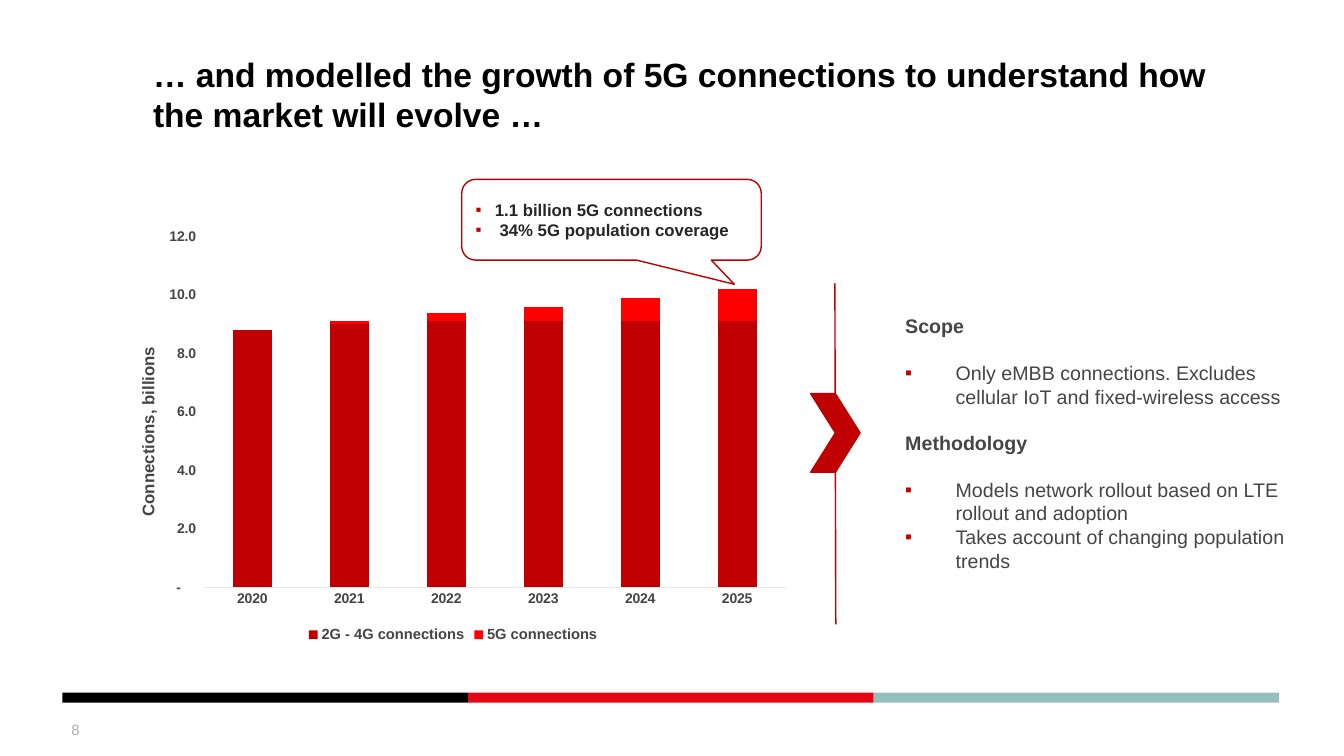
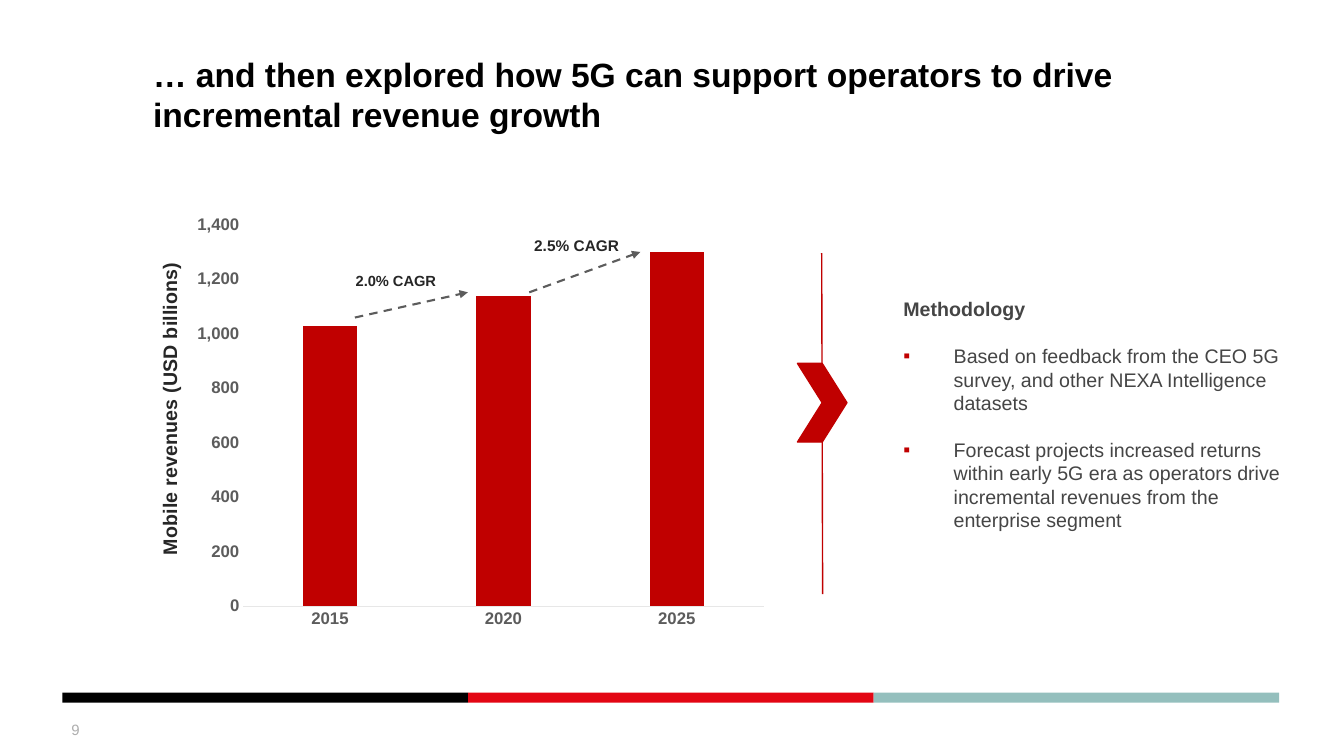
import dataclasses

import lxml.etree
import pptx
import pptx.chart.data
import pptx.dml.color
import pptx.enum.chart
import pptx.enum.dml
import pptx.enum.shapes
import pptx.enum.text
import pptx.oxml.ns
import pptx.util


@dataclasses.dataclass(frozen=True)
class Theme:
    font: str = "Arial"
    black: str = "000000"
    red: str = "C00000"
    bright_red: str = "FF0000"
    dark: str = "262626"
    body: str = "454545"
    gray: str = "5C5C5C"
    pale: str = "AEAEAE"
    axis_line: str = "E7E7E7"
    bands: tuple = ("000000", "E30613", "94BFBD")
    title_size: float = 24
    body_size: float = 14
    callout_size: float = 12
    number_size: float = 10.7
    paragraph_gap: float = 16.5


THEME = Theme()
WIDTH = pptx.util.Inches(13.33)
HEIGHT = pptx.util.Inches(7.5)
SHAPES = pptx.enum.shapes.MSO_SHAPE
MIDDLE = pptx.enum.text.MSO_ANCHOR.MIDDLE

# All positions are percentages of the slide's width and height.
TITLE_BOX = (10.65, 7.07, 80.57, 10.67)
NUMBER_BOX = (4.58, 93.87, 23.33, 5.33)
BAND_BOX = (4.65, 91.6, 90.53, 1.33)

# Notes are (text, style, gap before); layouts within charts are shares of the chart.
SLIDES = [
    {
        "number": "8",
        "title": "… and modelled the growth of 5G connections to understand how the market will evolve …",
        "chart": {
            "box": (7.95, 29.07, 51.54, 56.53),
            "type": pptx.enum.chart.XL_CHART_TYPE.COLUMN_STACKED,
            "categories": ["2020", "2021", "2022", "2023", "2024", "2025"],
            "series": [
                ("2G - 4G connections", [8.8, 9, 9.1, 9.1, 9.1, 9.1], THEME.red),
                ("5G connections", [0, 0.1, 0.3, 0.5, 0.8, 1.1], THEME.bright_red),
            ],
            "gap": 150, "overlap": 100, "maximum": 12, "step": 2,
            "format": '_-* #,##0.0_-;\\-* #,##0.0_-;_-* "-"??_-;',
            "axis_title": ("Connections, billions", 12, THEME.body),
            "labels": (10, THEME.body),
            "legend_size": 10.5,
            "plot": {"x": 0.14, "y": 0.04, "w": 0.84, "h": 0.82},
            "title_place": {"x": 0.04, "y": 0.29},
        },
        "divider": (62.12, 37.47),
        "notes_box": (66.62, 40.93, 31.06, 38.4),
        "notes": [
            ("Scope", "heading", False),
            ("Only eMBB connections. Excludes cellular IoT and fixed-wireless access", "bullet", True),
            ("Methodology", "heading", True),
            ("Models network rollout based on LTE rollout and adoption", "bullet", True),
            ("Takes account of changing population trends", "bullet", False),
        ],
        "callout": {
            "box": (34.36, 23.73, 22.28, 10.67),
            "lines": ["1.1 billion 5G connections", " 34% 5G population coverage"],
        },
    },
    {
        "number": "9",
        "title": "… and then explored how 5G can support operators to drive incremental revenue growth",
        "chart": {
            "box": (9.98, 27.47, 47.79, 56.67),
            "type": pptx.enum.chart.XL_CHART_TYPE.COLUMN_CLUSTERED,
            "categories": ["2015", "2020", "2025"],
            "series": [("Series 1", [1030, 1140, 1300], THEME.red)],
            "gap": 219, "overlap": -27, "maximum": 1400, "step": 200,
            "format": "#,##0",
            "axis_title": ("Mobile revenues (USD billions)", 14, THEME.dark),
            "labels": (12, THEME.gray),
            "plot": {"x": 0.17, "y": 0.04, "w": 0.81, "h": 0.89},
            "title_place": {"x": 0.03, "y": 0.12},
        },
        "divider": (61.14, 33.47),
        "notes_box": (66.47, 38.67, 31.06, 34.27),
        "notes": [
            ("Methodology", "heading", False),
            ("Based on feedback from the CEO 5G survey, and other NEXA Intelligence datasets", "bullet", True),
            ("Forecast projects increased returns within early 5G era as operators drive "
             "incremental revenues from the enterprise segment", "bullet", True),
        ],
        "growth": [
            {"text": "2.0% CAGR", "size": 10.5, "box": (25.73, 35.33, 9.08, 3.87),
             "arrow": (26.41, 42, 34.81, 38.67)},
            {"text": "2.5% CAGR", "size": 11, "box": (39.01, 30.53, 8.18, 3.87),
             "arrow": (39.38, 38.67, 47.64, 33.33)},
        ],
    },
]


def place(*percentages):
    """Turn alternating horizontal and vertical percentages into lengths."""
    return [round((HEIGHT if index % 2 else WIDTH) * share / 100)
            for index, share in enumerate(percentages)]


def color(value):
    return pptx.dml.color.RGBColor.from_string(value)


def add_element(parent, tag, **attributes):
    element = lxml.etree.SubElement(parent, pptx.oxml.ns.qn(tag))
    for name, value in attributes.items():
        element.set(name, str(value))
    return element


def style_font(font, size, value, bold=False):
    font.name = THEME.font
    font.size = pptx.util.Pt(size)
    font.bold = bold
    font.color.rgb = color(value)


def add_run(paragraph, text, size, value, bold=False):
    run = paragraph.add_run()
    run.text = text
    style_font(run.font, size, value, bold)


def next_paragraph(frame, index):
    return frame.add_paragraph() if index else frame.paragraphs[0]


def set_bullet(paragraph, indent):
    properties = paragraph._p.get_or_add_pPr()
    length = pptx.util.Inches(indent)
    properties.set("marL", str(length))
    properties.set("indent", str(-length))
    bullet_color = add_element(properties, "a:buClr")
    add_element(bullet_color, "a:srgbClr", val=THEME.red)
    add_element(properties, "a:buFont", typeface=THEME.font)
    add_element(properties, "a:buChar", char="▪")


def add_text_box(slide, box):
    frame = slide.shapes.add_textbox(*place(*box)).text_frame
    frame.word_wrap = True
    return frame


def add_label(slide, box, text, size, value, bold=False, anchor=None):
    frame = add_text_box(slide, box)
    frame.vertical_anchor = anchor
    add_run(frame.paragraphs[0], text, size, value, bold)


def add_preset(slide, preset, box, fill=None, line=None):
    shape = slide.shapes.add_shape(preset, *place(*box))
    shape.shadow.inherit = False
    if fill:
        shape.fill.solid()
        shape.fill.fore_color.rgb = color(fill)
    else:
        shape.fill.background()
    if line:
        shape.line.color.rgb = color(line)
        shape.line.width = pptx.util.Pt(1)
    else:
        shape.line.fill.background()
    return shape


def add_line(slide, ends, value, width):
    connector = slide.shapes.add_connector(
        pptx.enum.shapes.MSO_CONNECTOR.STRAIGHT, *place(*ends))
    connector.line.color.rgb = color(value)
    connector.line.width = pptx.util.Pt(width)
    add_element(connector._element.spPr, "a:effectLst")
    return connector


def add_frame(slide, content):
    """Add the title, the three footer bands and the slide number."""
    add_label(slide, TITLE_BOX, content["title"], THEME.title_size, THEME.black, True, MIDDLE)
    left, top, width, height = BAND_BOX
    band_width = width / len(THEME.bands)
    for index, fill in enumerate(THEME.bands):
        add_preset(slide, SHAPES.RECTANGLE, (left + index * band_width, top, band_width, height), fill)
    add_label(slide, NUMBER_BOX, content["number"], THEME.number_size, THEME.pale, anchor=MIDDLE)


def set_chart_layout(parent, index, shares, inner=False):
    """Fix the place of a chart part, given as shares of the chart."""
    for old in parent.findall(pptx.oxml.ns.qn("c:layout")):
        parent.remove(old)
    layout = lxml.etree.Element(pptx.oxml.ns.qn("c:layout"))
    manual = add_element(layout, "c:manualLayout")
    if inner:
        add_element(manual, "c:layoutTarget", val="inner")
    for side in "xy":
        add_element(manual, f"c:{side}Mode", val="edge")
    for name, share in shares.items():
        add_element(manual, f"c:{name}", val=share)
    parent.insert(index, layout)


def style_axes(chart, content):
    size, value = content["labels"]
    for axis in (chart.category_axis, chart.value_axis):
        axis.has_major_gridlines = False
        axis.major_tick_mark = pptx.enum.chart.XL_TICK_MARK.NONE
        style_font(axis.tick_labels.font, size, value, True)
    chart.category_axis.format.line.color.rgb = color(THEME.axis_line)
    chart.category_axis.format.line.width = pptx.util.Pt(0.75)
    axis = chart.value_axis
    axis.format.line.fill.background()
    axis.minimum_scale = 0
    axis.maximum_scale = content["maximum"]
    axis.major_unit = content["step"]
    axis.tick_labels.number_format = content["format"]
    axis.tick_labels.number_format_is_linked = False
    frame = axis.axis_title.text_frame
    frame._txBody.bodyPr.set("rot", "-5400000")
    frame._txBody.bodyPr.set("vert", "horz")
    add_run(frame.paragraphs[0], *content["axis_title"], True)
    set_chart_layout(axis.axis_title._element, 1, content["title_place"])


def add_column_chart(slide, content):
    data = pptx.chart.data.CategoryChartData()
    data.categories = content["categories"]
    for name, values, _ in content["series"]:
        data.add_series(name, values)
    chart = slide.shapes.add_chart(content["type"], *place(*content["box"]), data).chart
    style_font(chart.font, content["labels"][0], THEME.gray)
    chart.has_title = False
    plot = chart.plots[0]
    plot.vary_by_categories = False
    plot.gap_width = content["gap"]
    plot.overlap = content["overlap"]
    for series, (_, _, fill) in zip(plot.series, content["series"]):
        series.format.fill.solid()
        series.format.fill.fore_color.rgb = color(fill)
    style_axes(chart, content)
    chart.has_legend = "legend_size" in content
    if chart.has_legend:
        chart.legend.position = pptx.enum.chart.XL_LEGEND_POSITION.BOTTOM
        chart.legend.include_in_layout = False
        style_font(chart.legend.font, content["legend_size"], THEME.body, True)
    plot_area = chart._chartSpace.find(".//" + pptx.oxml.ns.qn("c:plotArea"))
    set_chart_layout(plot_area, 0, content["plot"], inner=True)


def add_divider(slide, left, top):
    add_line(slide, (left, top, left + 0.07, top + 45.13), THEME.red, 1)
    add_preset(slide, SHAPES.CHEVRON, (left - 1.8, top + 14.6, 3.68, 10.4), THEME.red, THEME.red)


def add_notes(slide, box, notes):
    frame = add_text_box(slide, box)
    for index, (text, style, gap) in enumerate(notes):
        paragraph = next_paragraph(frame, index)
        if style == "bullet":
            set_bullet(paragraph, 0.5)
        if gap:
            paragraph.space_before = pptx.util.Pt(THEME.paragraph_gap)
        add_run(paragraph, text, THEME.body_size, THEME.body, style == "heading")


def add_callout(slide, content):
    callout = add_preset(slide, SHAPES.ROUNDED_RECTANGULAR_CALLOUT, content["box"], line=THEME.red)
    for index, adjustment in enumerate((0.41, 0.8, 0.17)):
        callout.adjustments[index] = adjustment
    frame = callout.text_frame
    frame.word_wrap = True
    frame.vertical_anchor = MIDDLE
    for index, text in enumerate(content["lines"]):
        paragraph = next_paragraph(frame, index)
        paragraph.alignment = pptx.enum.text.PP_ALIGN.LEFT
        set_bullet(paragraph, 0.19)
        add_run(paragraph, text, THEME.callout_size, THEME.dark, True)


def add_growth(slide, content):
    add_label(slide, content["box"], content["text"], content["size"], THEME.dark, True)
    arrow = add_line(slide, content["arrow"], THEME.gray, 1.5)
    arrow.line.dash_style = pptx.enum.dml.MSO_LINE.DASH
    add_element(arrow.line._get_or_add_ln(), "a:tailEnd", type="triangle")


def main():
    presentation = pptx.Presentation()
    presentation.slide_width, presentation.slide_height = WIDTH, HEIGHT
    for content in SLIDES:
        slide = presentation.slides.add_slide(presentation.slide_layouts[6])
        add_frame(slide, content)
        add_column_chart(slide, content["chart"])
        add_divider(slide, *content["divider"])
        add_notes(slide, content["notes_box"], content["notes"])
        if "callout" in content:
            add_callout(slide, content["callout"])
        for growth in content.get("growth", []):
            add_growth(slide, growth)
    presentation.save("out.pptx")


if __name__ == "__main__":
    main()
